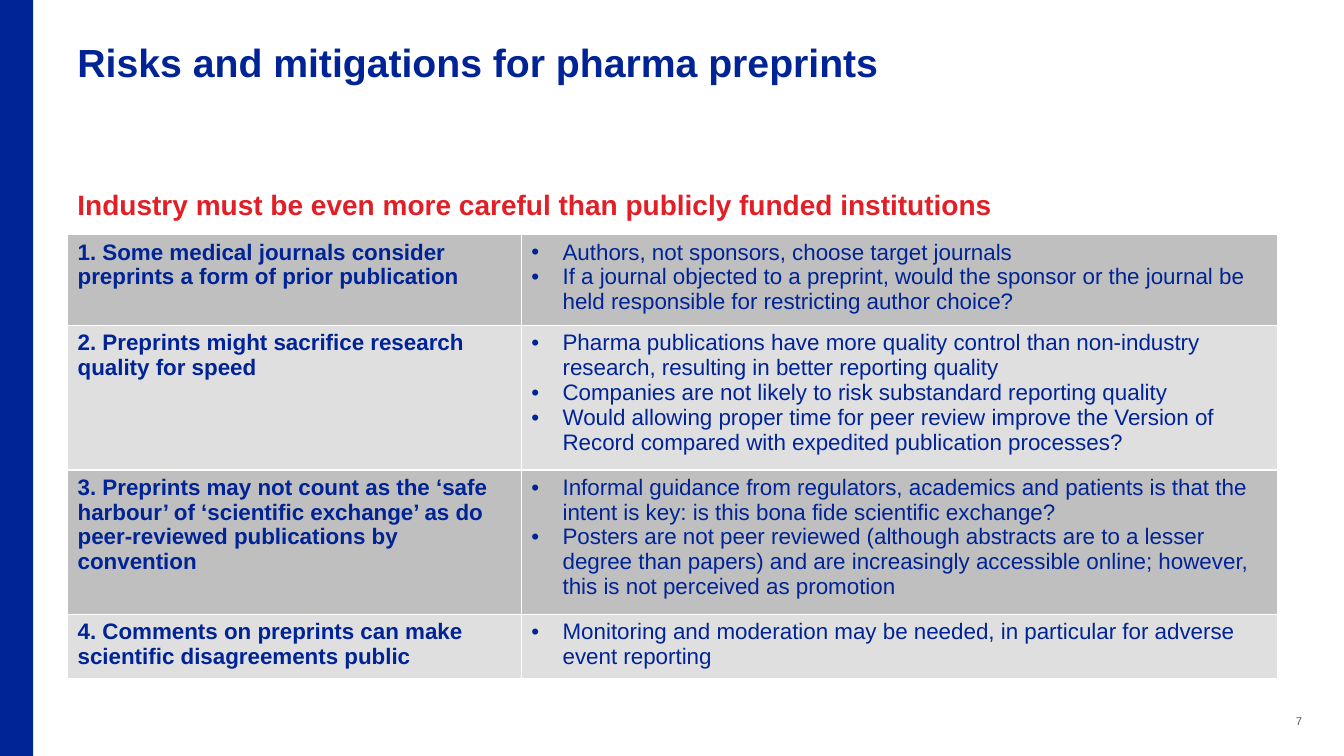
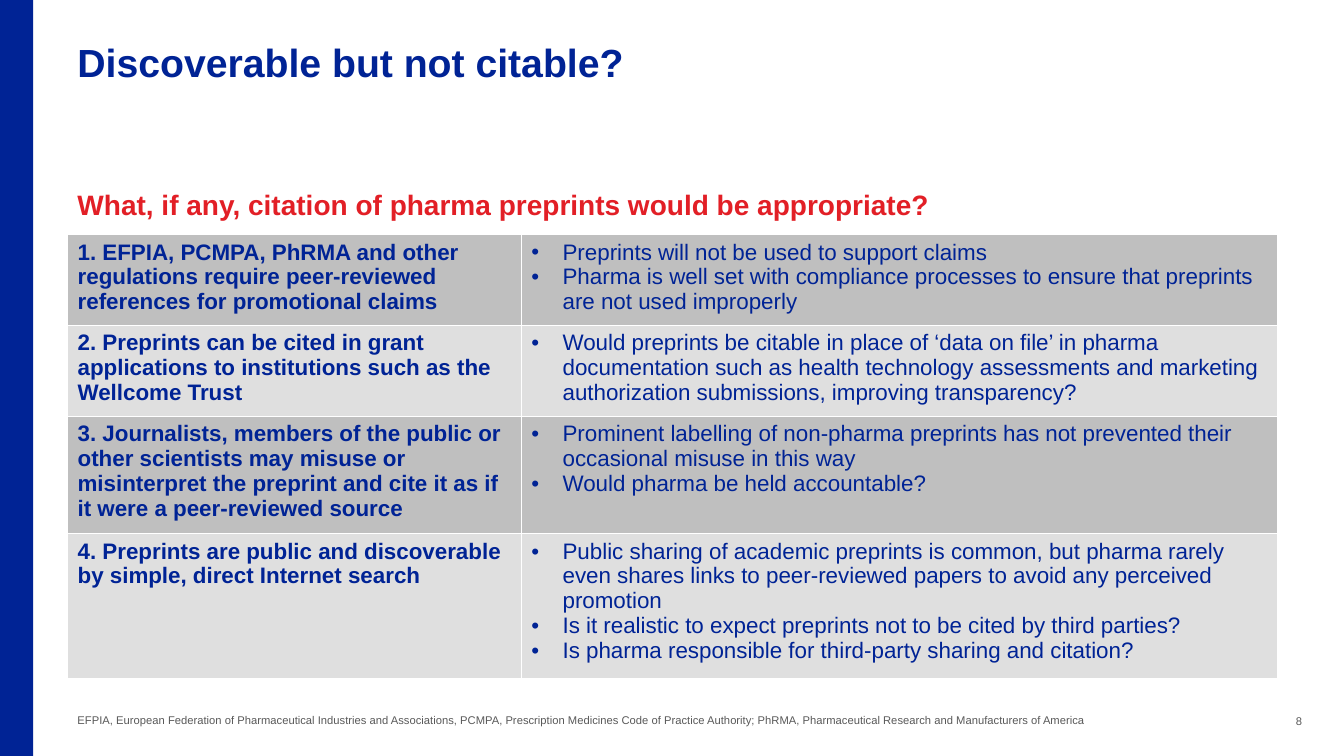
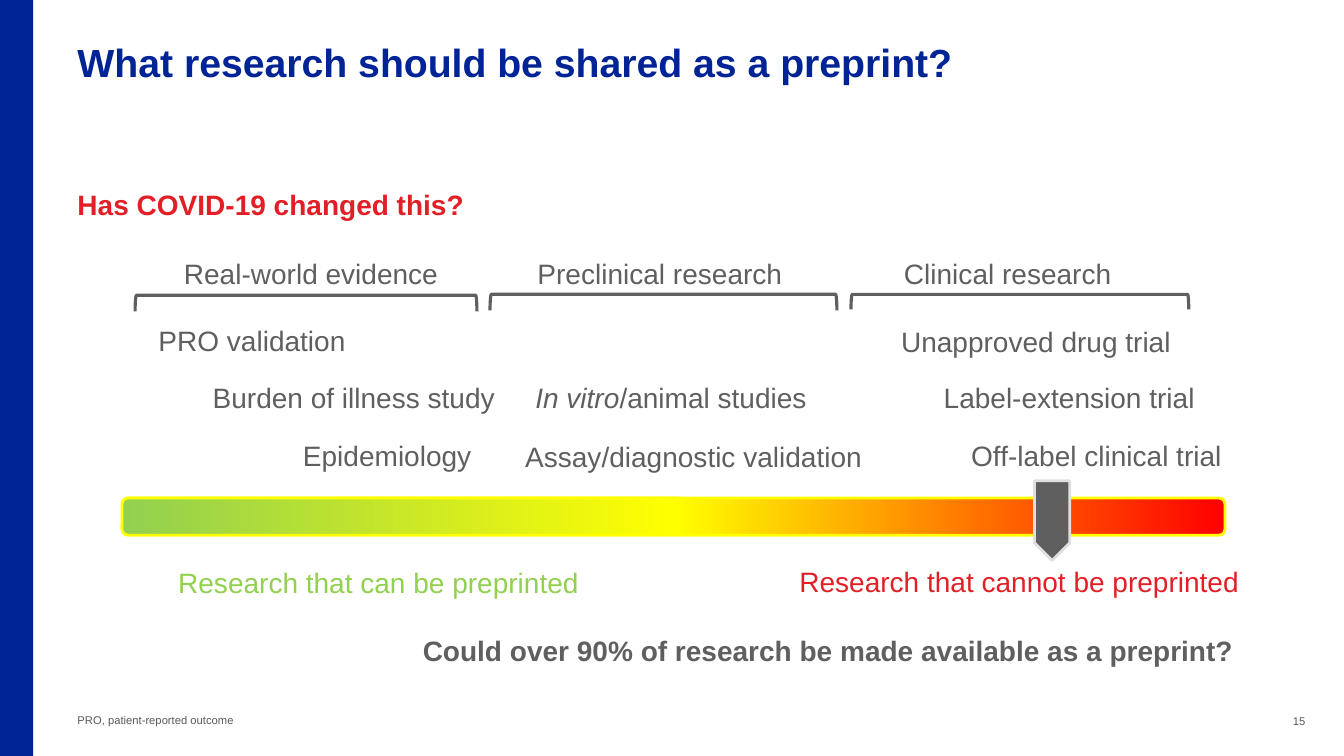
import pptx
import pptx.util
import pptx.dml.color
import pptx.enum.shapes
import pptx.enum.text
import pptx.oxml.ns
from lxml import etree

SHAPE = pptx.enum.shapes.MSO_SHAPE
ALIGN = pptx.enum.text.PP_ALIGN
ANCHOR = pptx.enum.text.MSO_ANCHOR
qn = pptx.oxml.ns.qn

PX = 9144  # 100 px to the inch
FONT = "Arial"
COLOURS = {
    "navy": "002395", "red": "E21F26", "grey": "5F5F5F", "note": "595959",
    "white": "FFFFFF", "odd row": "BFBFBF", "even row": "DFDFDF",
    "green": "92D050", "yellow": "FFFF00", "bright red": "FF0000",
}

RISKS = {
    "title": "Risks and mitigations for pharma preprints",
    "subtitle": "Industry must be even more careful than publicly funded institutions",
    "number": 7,
    "rows": [
        (89, "1. Some medical journals consider preprints a form of prior publication", [
            "Authors, not sponsors, choose target journals",
            "If a journal objected to a preprint, would the sponsor or the journal be held responsible for restricting author choice?",
        ]),
        (142, "2. Preprints might sacrifice research quality for speed", [
            "Pharma publications have more quality control than non-industry research, resulting in better reporting quality",
            "Companies are not likely to risk substandard reporting quality",
            "Would allowing proper time for peer review improve the Version of Record compared with expedited publication processes?",
        ]),
        (142, "3. Preprints may not count as the ‘safe harbour’ of ‘scientific exchange’ as do peer-reviewed publications by convention", [
            "Informal guidance from regulators, academics and patients is that the intent is key: is this bona fide scientific exchange?",
            "Posters are not peer reviewed (although abstracts are to a lesser degree than papers) and are increasingly accessible online; however, this is not perceived as promotion",
        ]),
        (63, "4. Comments on preprints can make scientific disagreements public", [
            "Monitoring and moderation may be needed, in particular for adverse event reporting",
        ]),
    ],
}

CITATION = {
    "title": "Discoverable but not citable?",
    "subtitle": "What, if any, citation of pharma preprints would be appropriate?",
    "number": 8,
    "footnote": "EFPIA, European Federation of Pharmaceutical Industries and Associations, PCMPA, Prescription Medicines Code of Practice Authority; PhRMA, Pharmaceutical Research and Manufacturers of America",
    "rows": [
        (84, "1. EFPIA, PCMPA, PhRMA and other regulations require peer-reviewed references for promotional claims", [
            "Preprints will not be used to support claims",
            "Pharma is well set with compliance processes to ensure that preprints are not used improperly",
        ]),
        (84, "2. Preprints can be cited in grant applications to institutions such as the Wellcome Trust", [
            "Would preprints be citable in place of ‘data on file’ in pharma documentation such as health technology assessments and marketing authorization submissions, improving transparency?",
        ]),
        (109, "3. Journalists, members of the public or other scientists may misuse or misinterpret the preprint and cite it as if it were a peer-reviewed source", [
            "Prominent labelling of non-pharma preprints has not prevented their occasional misuse in this way",
            "Would pharma be held accountable?",
        ]),
        (133, "4. Preprints are public and discoverable by simple, direct Internet search", [
            "Public sharing of academic preprints is common, but pharma rarely even shares links to peer-reviewed papers to avoid any perceived promotion",
            "Is it realistic to expect preprints not to be cited by third parties?",
            "Is pharma responsible for third-party sharing and citation?",
        ]),
    ],
}

SPECTRUM = {
    "title": "What research should be shared as a preprint?",
    "subtitle": "Has COVID-19 changed this?",
    "number": 15,
    "footnote": "PRO, patient-reported outcome",
    "brackets": [(134, 293, 339, 16), (486, 292, 344, 16), (844, 292, 335, 15)],
    # left, top, width, text, colour
    "labels": [
        (165, 250, 287, "Real-world evidence", "grey"),
        (511, 250, 287, "Preclinical research", "grey"),
        (856, 250, 287, "Clinical research", "grey"),
        (125, 316, 250, "PRO validation", "grey"),
        (166, 373, 370, "Burden of illness study", "grey"),
        (285, 430, 198, "Epidemiology", "grey"),
        (512, 373, 307, "*In vitro*/animal studies", "grey"),
        (493, 431, 390, "Assay/diagnostic validation", "grey"),
        (848, 317, 359, "Unapproved drug trial", "grey"),
        (907, 373, 307, "Label-extension trial", "grey"),
        (944, 430, 287, "Off-label clinical trial", "grey"),
        (156, 556, 439, "Research that can be preprinted", "green"),
        (782, 555, 458, "Research that cannot be preprinted", "red"),
    ],
    "question": (383, 624, 877, "Could over 90% of research be made available as a preprint?", "grey"),
    "scale": (121, 494, 1094, 37),
    "stops": [(0, "green"), (50, "yellow"), (100, "bright red")],
    "marker": (1026, 477, 35, 79),
}


def rgb(colour):
    return pptx.dml.color.RGBColor.from_string(COLOURS[colour])


def set_font(paragraph, size, colour, bold=False):
    font = paragraph.font
    font.name, font.size, font.bold = FONT, pptx.util.Pt(size), bold
    font.color.rgb = rgb(colour)


def add_text(slide, frame, text, size, colour, bold=False, align=ALIGN.LEFT, anchor=ANCHOR.TOP):
    """Add a one-paragraph text box; text between asterisks is italic."""
    box = slide.shapes.add_textbox(*(v * PX for v in frame)).text_frame
    box.word_wrap = True
    box.vertical_anchor = anchor
    paragraph = box.paragraphs[0]
    paragraph.alignment = align
    set_font(paragraph, size, colour, bold)
    for i, part in enumerate(text.split("*")):
        if part:
            run = paragraph.add_run()
            run.text = part
            if i % 2:
                run.font.italic = True
    return box


def add_shape(slide, kind, frame, fill=None, line=None, weight=2, turned=False):
    """Add a preset shape; a turned one is rotated by 90 degrees to fill frame."""
    left, top, width, height = (v * PX for v in frame)
    if turned:
        left += (width - height) // 2
        top -= (width - height) // 2
        width, height = height, width
    shape = slide.shapes.add_shape(kind, left, top, width, height)
    shape.rotation = 90 if turned else 0
    shape.shadow.inherit = False
    if fill:
        shape.fill.solid()
        shape.fill.fore_color.rgb = rgb(fill)
    else:
        shape.fill.background()
    if line:
        shape.line.color.rgb = rgb(line)
        shape.line.width = pptx.util.Pt(weight)
    else:
        shape.line.fill.background()
    return shape


def add_base_slide(deck, content):
    slide = deck.slides.add_slide(deck.slide_layouts[6])
    add_shape(slide, SHAPE.RECTANGLE, (0, 0, 33, 750), "navy")
    title = add_text(slide, (67, 30, 950, 125), content["title"], 28, "navy", True)
    title.margin_top = 8 * PX
    add_text(slide, (67, 168, 1200, 70), content["subtitle"], 20, "red", True,
             anchor=ANCHOR.MIDDLE)
    if "footnote" in content:
        add_text(slide, (67, 695, 1138, 38), content["footnote"], 8, "note",
                 anchor=ANCHOR.MIDDLE)
    add_text(slide, (1267, 695, 43, 40), str(content["number"]), 8, "note",
             align=ALIGN.CENTER, anchor=ANCHOR.MIDDLE)
    return slide


def add_bullet(paragraph):
    properties = paragraph._p.get_or_add_pPr()
    properties.set("marL", str(31 * PX))
    properties.set("indent", str(-31 * PX))
    etree.SubElement(properties, qn("a:buFont"), typeface=FONT)
    etree.SubElement(properties, qn("a:buChar"), char="•")


def style_cell(cell, fill):
    properties = cell._tc.get_or_add_tcPr()
    for side in ("lnL", "lnR", "lnT", "lnB"):
        border = etree.SubElement(properties, qn("a:" + side), w=str(pptx.util.Pt(1)))
        solid = etree.SubElement(border, qn("a:solidFill"))
        etree.SubElement(solid, qn("a:srgbClr"), val=COLOURS["white"])
    cell.fill.solid()
    cell.fill.fore_color.rgb = rgb(fill)


def add_table_slide(deck, content):
    slide = add_base_slide(deck, content)
    rows = content["rows"]
    height = sum(row[0] for row in rows)
    table = slide.shapes.add_table(len(rows), 2, 67 * PX, 233 * PX, 1200 * PX, height * PX).table
    table.first_row = table.horz_banding = False
    for column, width in zip(table.columns, (450, 750)):
        column.width = width * PX
    for i, (row_height, issue, responses) in enumerate(rows):
        table.rows[i].height = row_height * PX
        for j, lines in enumerate(([issue], responses)):
            cell = table.cell(i, j)
            style_cell(cell, "even row" if i % 2 else "odd row")
            cell.text = "\n".join(lines)
            for paragraph in cell.text_frame.paragraphs:
                if j == 1:
                    add_bullet(paragraph)
                set_font(paragraph, 16, "navy", bold=j == 0)


def set_gradient(shape, stops):
    """Fill the shape from left to right with (percent, colour) stops."""
    shape.fill.gradient()
    shape.fill.gradient_angle = 0
    stop_list = shape._element.spPr.find(qn("a:gradFill")).find(qn("a:gsLst"))
    for stop in list(stop_list):
        stop_list.remove(stop)
    for percent, colour in stops:
        stop = etree.SubElement(stop_list, qn("a:gs"), pos=str(percent * 1000))
        etree.SubElement(stop, qn("a:srgbClr"), val=COLOURS[colour])


def add_spectrum_slide(deck, content):
    slide = add_base_slide(deck, content)
    for frame in content["brackets"]:
        add_shape(slide, SHAPE.LEFT_BRACKET, frame, line="grey", weight=2.25, turned=True)
    for label in content["labels"] + [content["question"]]:
        left, top, width, text, colour = label
        add_text(slide, (left, top, width, 44), text, 20, colour,
                 bold=label is content["question"], align=ALIGN.CENTER)
    scale = add_shape(slide, SHAPE.FLOWCHART_ALTERNATE_PROCESS, content["scale"], line="yellow")
    set_gradient(scale, content["stops"])
    add_shape(slide, SHAPE.PENTAGON, content["marker"], "grey", "even row", turned=True)


def main():
    deck = pptx.Presentation()
    deck.slide_width, deck.slide_height = 1333 * PX, 750 * PX
    add_table_slide(deck, RISKS)
    add_table_slide(deck, CITATION)
    add_spectrum_slide(deck, SPECTRUM)
    deck.save("out.pptx")


if __name__ == "__main__":
    main()
